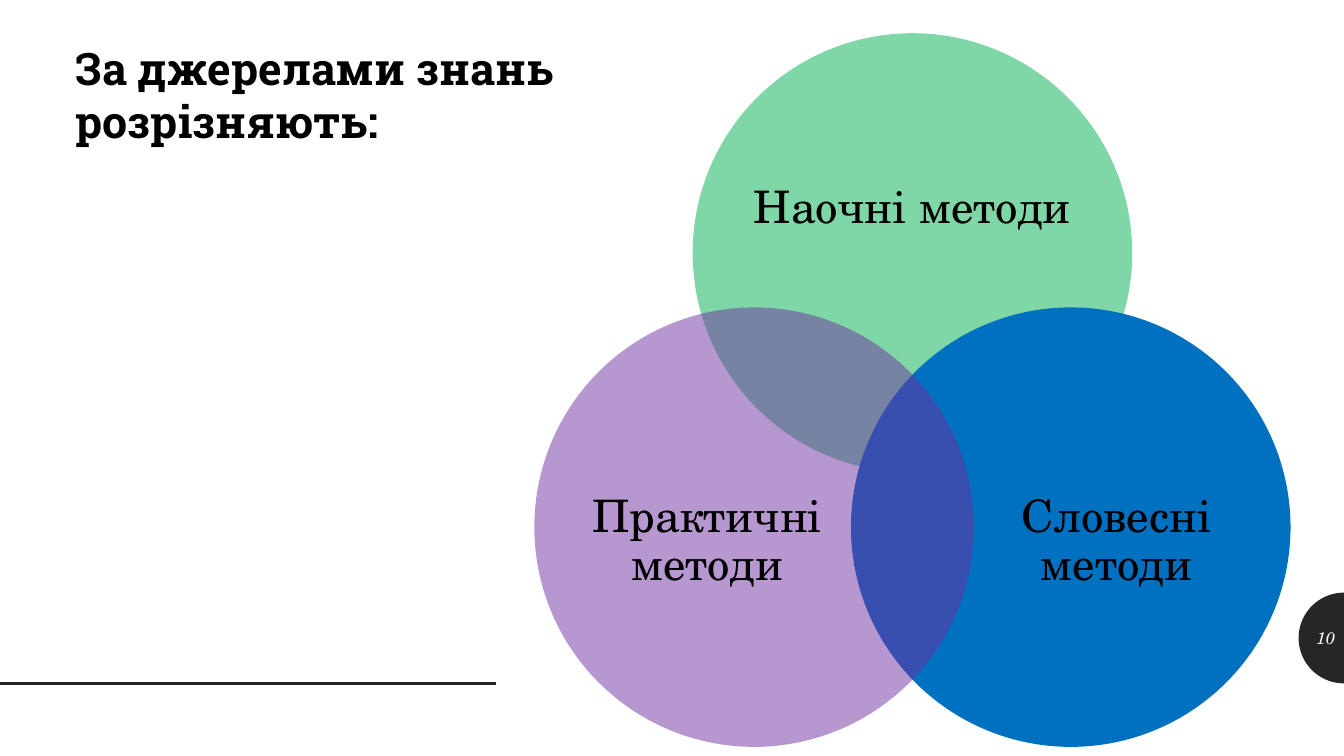
import math

from lxml import etree
from pptx import Presentation
from pptx.dml.color import RGBColor
from pptx.enum.shapes import MSO_CONNECTOR, MSO_SHAPE
from pptx.enum.text import MSO_ANCHOR, PP_ALIGN
from pptx.oxml.ns import qn
from pptx.util import Inches, Pt

STRAIGHT, OVAL = MSO_CONNECTOR.STRAIGHT, MSO_SHAPE.OVAL
TOP, MIDDLE = MSO_ANCHOR.TOP, MSO_ANCHOR.MIDDLE
LEFT, CENTER, RIGHT = PP_ALIGN.LEFT, PP_ALIGN.CENTER, PP_ALIGN.RIGHT

BLACK = RGBColor(0x00, 0x00, 0x00)
CHARCOAL = RGBColor(0x26, 0x26, 0x26)
PALE = RGBColor(0xF5, 0xF5, 0xF5)
GREEN = RGBColor(0x00, 0xB0, 0x50)
BLUE = RGBColor(0x00, 0x70, 0xC0)
PURPLE = RGBColor(0x70, 0x30, 0xA0)

LABEL_FONT = {"name": "TeX Gyre Schola", "size": Pt(32)}
TITLE_FONT = {"name": "Roboto Slab", "size": Pt(32), "bold": True}
NUMBER_FONT = {"name": "TeX Gyre Schola", "size": Pt(12), "italic": True}

prs = Presentation()
prs.slide_width, prs.slide_height = Inches(13.33), Inches(7.5)
slide = prs.slides.add_slide(prs.slide_layouts[6])


def add_text(text, box, font_format, color, align, anchor, inset=None):
    textbox = slide.shapes.add_textbox(*[Inches(v) for v in box])
    frame = textbox.text_frame
    frame.word_wrap = True
    frame.vertical_anchor = anchor
    if inset is not None:
        for side in ("left", "top", "right", "bottom"):
            setattr(frame, f"margin_{side}", Inches(inset))
    paragraph = frame.paragraphs[0]
    paragraph.alignment = align
    run = paragraph.add_run()
    run.text = text
    for name, value in font_format.items():
        setattr(run.font, name, value)
    run.font.color.rgb = color
    return paragraph


# Half-round page tab on the right edge
TAB_X, TAB_Y, TAB_R, TAB_STEPS = 13.33, 6.33, 0.45, 48
arc = []
for step in range(TAB_STEPS + 1):
    angle = math.pi * step / TAB_STEPS
    arc.append((Inches(TAB_X - TAB_R * math.sin(angle)),
                Inches(TAB_Y + TAB_R * math.cos(angle))))
builder = slide.shapes.build_freeform(*arc[0])
builder.add_line_segments(arc[1:], close=True)
page_tab = builder.convert_to_shape()
page_tab.shadow.inherit = False
page_tab.fill.solid()
page_tab.fill.fore_color.rgb = CHARCOAL
page_tab.line.fill.background()

# Footer rule
footer_rule = slide.shapes.add_connector(
    STRAIGHT, Inches(0), Inches(6.78), Inches(4.92), Inches(6.78))
footer_rule.line.color.rgb = CHARCOAL
footer_rule.line.width = Pt(2)
etree.SubElement(footer_rule._element.spPr, qn("a:effectLst"))

# Page number and title
add_text("10", (12.89, 6.13, 0.45, 0.4), NUMBER_FONT, PALE, RIGHT, MIDDLE)
add_text("За джерелами знань розрізняють:", (0.65, 0.35, 6.24, 1.18),
         TITLE_FONT, BLACK, LEFT, TOP)

# Venn diagram: circle corner, colour, opacity in percent, label and its box
DIAMETER = 4.36
VENN_X, SHIFT_X = 6.87, 1.57
VENN_TOP, VENN_LOW = 0.33, 3.05
methods = [
    (VENN_X, VENN_TOP, GREEN, 50, "Наочні методи", (7.45, 1.09, 3.2, 1.96)),
    (VENN_X + SHIFT_X, VENN_LOW, BLUE, 100, "Словесні методи", (9.77, 4.18, 2.61, 2.4)),
    (VENN_X - SHIFT_X, VENN_LOW, PURPLE, 50, "Практичні методи", (5.71, 4.18, 2.61, 2.4)),
]
for left, top, color, opacity, label, label_box in methods:
    circle = slide.shapes.add_shape(
        OVAL, Inches(left), Inches(top), Inches(DIAMETER), Inches(DIAMETER))
    circle.shadow.inherit = False
    circle.fill.solid()
    circle.fill.fore_color.rgb = color
    circle.line.fill.background()
    if opacity < 100:
        fill_color = circle._element.spPr.find(qn("a:solidFill"))[0]
        etree.SubElement(fill_color, qn("a:alpha"), val=str(opacity * 1000))
    caption = add_text(label, label_box, LABEL_FONT, BLACK, CENTER, MIDDLE, inset=0)
    caption.line_spacing = 0.9

prs.save("out.pptx")
